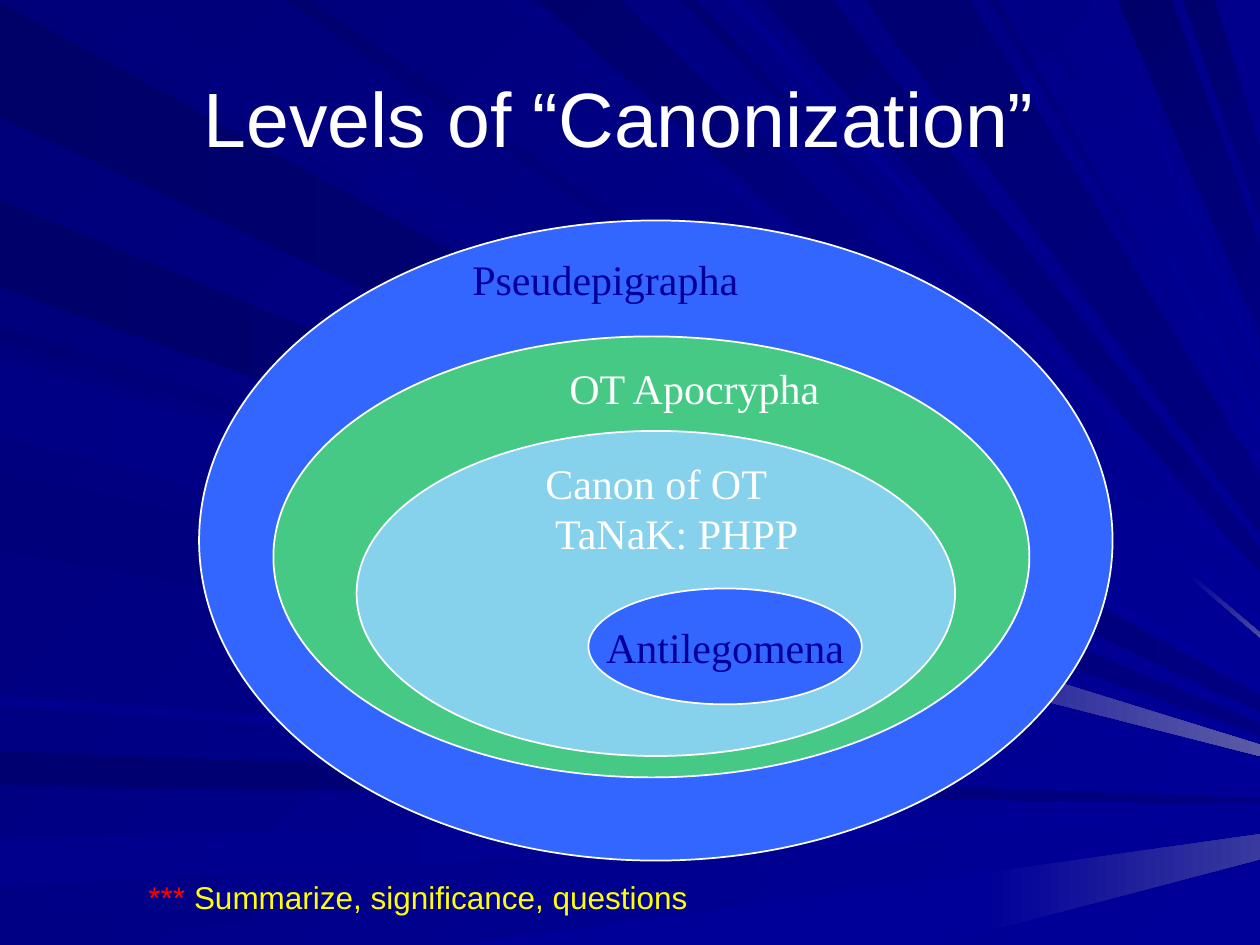
from pptx import Presentation
from pptx.dml.color import RGBColor
from pptx.enum.shapes import MSO_SHAPE
from pptx.enum.text import MSO_ANCHOR, PP_ALIGN
from pptx.util import Pt

PX = 9144
WIDTH, HEIGHT = 1000, 750
FOCUS_X, FOCUS_Y = 1160, 640
WHITE, NAVY, BLUE = "FFFFFF", "000099", "3366FF"
SERIF = {"name": "Times New Roman", "size": Pt(24)}
SANS = {"name": "Arial", "size": Pt(18)}
TITLE = {"name": "Arial", "size": Pt(44)}

RAYS = [
    (-93, -2, "000069", "000080"),
    (26, 101, "00007B", NAVY),
    (-623, -596, "000071", "000080"),
    (-704, -665, "00008C", NAVY),
    (-750, -735, "000085", NAVY),
    (-1492, -1114, NAVY, NAVY),
    (-270, -258, "000076", NAVY),
    (-228, -159, "00006B", "000080"),
    (398, 416, "000083", NAVY),
    (426, 492, "00006D", NAVY),
    (540, 552, "000073", NAVY),
    (606, 661, "000073", "000080"),
    (887, 930, "00006B", "000080"),
    (939, 964, "00006D", "000080"),
    (-342, -278, "00007E", NAVY),
    (-437, -374, "00007B", NAVY),
    (-560, -552, "00008E", NAVY),
    (225, 247, "000070", NAVY),
    (577, 588, "00008E", NAVY),
    (686, 770, "000073", "000080"),
    (785, 792, "000078", NAVY),
    (815, 824, "000085", NAVY),
    (865, 872, "00008A", NAVY),
    (-347, -283, "000085", NAVY),
]
TIPS = [
    (-1492, -1114, NAVY, "39399E", 780),
    (-347, -283, NAVY, "5A5AA6", 635),
    (398, 416, NAVY, "4A4AA1", 945),
]


def color(value):
    """Turn a hex string into a colour."""
    return RGBColor.from_string(value)


def paint(fill, start, end, angle=0):
    """Fill with one colour, or with a gradient at a clockwise angle."""
    if start == end:
        fill.solid()
        fill.fore_color.rgb = color(start)
        return
    fill.gradient()
    fill.gradient_angle = -angle % 360
    for stop, value in zip(fill.gradient_stops, (start, end)):
        stop.color.rgb = color(value)


def edge_point(position):
    """Find a slide edge point: top if positive, then down the left and along the bottom."""
    if position >= 0:
        return position, 0
    return max(0, -position - HEIGHT), min(HEIGHT, -position)


def toward_focus(point, x):
    """Move a point along its line to the focus until it reaches x."""
    left, top = point
    return x, round(top + (FOCUS_Y - top) * (x - left) / (FOCUS_X - left))


def add_ray(slide, first, second, start, end, near=None):
    """Draw a ray from the slide edge, or from x = near, to the right edge."""
    edges = [edge_point(first), edge_point(second)]
    tips = [toward_focus(edge, WIDTH) for edge in edges]
    bases = [toward_focus(edge, near) for edge in edges] if near else edges
    builder = slide.shapes.build_freeform(*bases[0], scale=PX)
    builder.add_line_segments([tips[0], tips[1], bases[1]], close=True)
    shape = builder.convert_to_shape()
    shape.shadow.inherit = False
    shape.line.fill.background()
    paint(shape.fill, start, end, 45 if first >= 0 else 0)


def write(paragraph, text, font_color, font):
    """Add coloured text to a paragraph, with a line break at each newline."""
    for index, line in enumerate(text.split("\n")):
        if index:
            paragraph.add_line_break()
        run = paragraph.add_run()
        run.text = line
        for name, value in font.items():
            setattr(run.font, name, value)
        run.font.color.rgb = color(font_color)


def add_ellipse(slide, box, fill):
    """Draw one level as a white-edged ellipse."""
    shape = slide.shapes.add_shape(MSO_SHAPE.OVAL, *(length * PX for length in box))
    shape.shadow.inherit = False
    paint(shape.fill, fill, fill)
    shape.line.color.rgb = color(WHITE)
    shape.line.width = Pt(1)
    return shape


def add_text(slide, box, pieces, font, alignment=PP_ALIGN.LEFT, anchor=MSO_ANCHOR.TOP):
    """Add a text box made of (text, colour) pieces."""
    frame = slide.shapes.add_textbox(*(length * PX for length in box)).text_frame
    frame.word_wrap = True
    frame.vertical_anchor = anchor
    paragraph = frame.paragraphs[0]
    paragraph.alignment = alignment
    for text, font_color in pieces:
        write(paragraph, text, font_color, font)


def main():
    """Build the slide and save it."""
    presentation = Presentation()
    presentation.slide_width, presentation.slide_height = WIDTH * PX, HEIGHT * PX
    slide = presentation.slides.add_slide(presentation.slide_layouts[6])
    paint(slide.background.fill, "000078", NAVY, 45)
    for ray in RAYS + TIPS:
        add_ray(slide, *ray)

    add_text(slide, (50, 30, 900, 125), [("Levels of “Canonization” ", WHITE)],
             TITLE, PP_ALIGN.CENTER, MSO_ANCHOR.MIDDLE)
    add_ellipse(slide, (158, 175, 725, 508), BLUE)
    add_text(slide, (365, 196, 239, 50), [("Pseudepigrapha", NAVY)], SERIF)
    add_ellipse(slide, (217, 267, 600, 350), "45C984")
    add_text(slide, (442, 283, 233, 51), [("OT Apocrypha", WHITE)], SERIF)
    add_ellipse(slide, (283, 342, 475, 258), "86D1EC")
    antilegomena = add_ellipse(slide, (467, 467, 217, 92), BLUE)
    antilegomena.text_frame.word_wrap = False
    write(antilegomena.text_frame.paragraphs[0], "Antilegomena", NAVY, SERIF)
    add_text(slide, (423, 358, 231, 91), [("Canon of OT\n TaNaK: PHPP", WHITE)], SERIF)
    add_text(slide, (108, 692, 452, 71),
             [("*** ", "FF0000"), ("Summarize, significance, questions", "FFFF00")], SANS)
    presentation.save("out.pptx")


if __name__ == "__main__":
    main()
